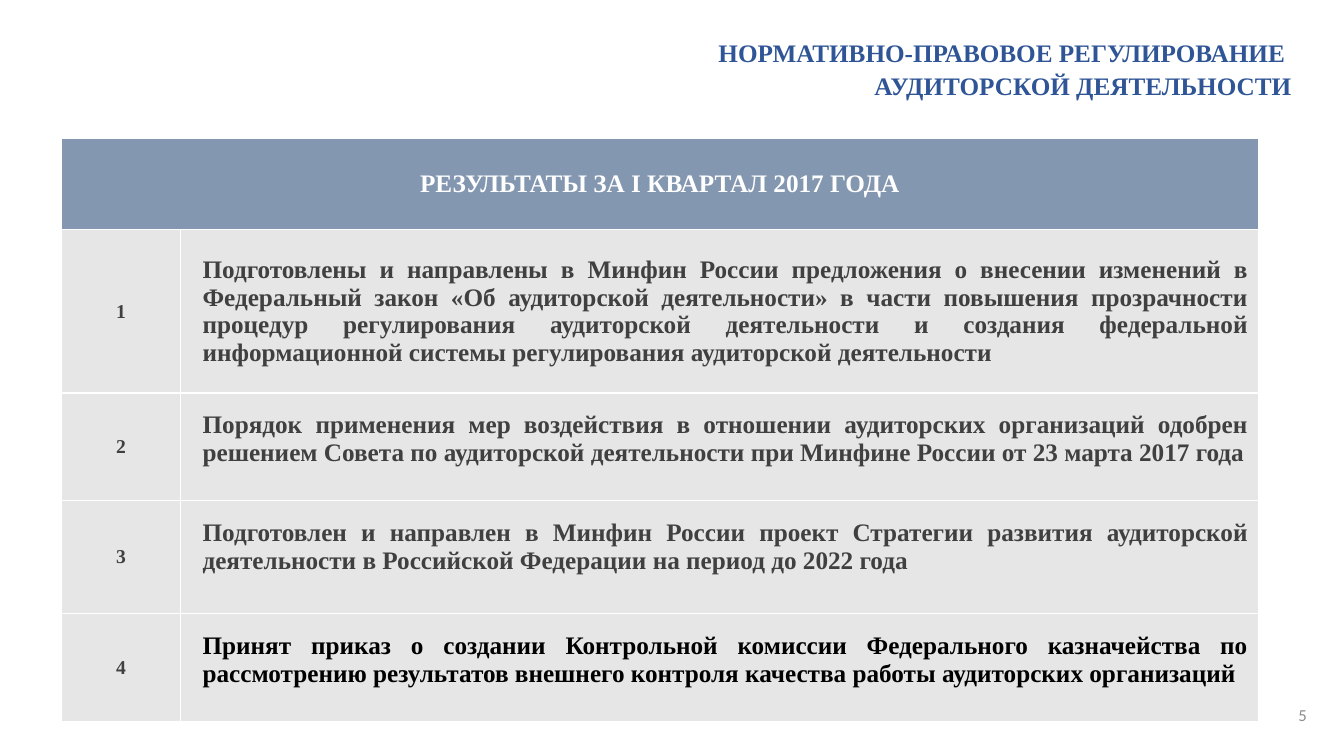
from pptx import Presentation
from pptx.dml.color import RGBColor
from pptx.enum.text import MSO_ANCHOR as Anchor, MSO_AUTO_SIZE as Fit, PP_ALIGN as Align
from pptx.util import Inches, Pt

BLUE = RGBColor(0x2F, 0x55, 0x97)
STEEL = RGBColor(0x84, 0x97, 0xB0)
PALE = RGBColor(0xE6, 0xE6, 0xE6)
DARK = RGBColor(0x40, 0x40, 0x40)
GRAY = RGBColor(0x8C, 0x8C, 0x8C)
BLACK = RGBColor(0, 0, 0)
WHITE = RGBColor(0xFF, 0xFF, 0xFF)
SERIF = "Times New Roman"

TITLE = ["НОРМАТИВНО-ПРАВОВОЕ РЕГУЛИРОВАНИЕ ", "АУДИТОРСКОЙ ДЕЯТЕЛЬНОСТИ"]
HEAD = "РЕЗУЛЬТАТЫ ЗА I КВАРТАЛ 2017 ГОДА"
# text, row height, anchor, top margin, colour
ITEMS = [
    ("Подготовлены и направлены в Минфин России предложения о внесении изменений "
     "в Федеральный закон «Об аудиторской деятельности» в части повышения "
     "прозрачности процедур регулирования аудиторской деятельности и создания "
     "федеральной информационной системы регулирования аудиторской деятельности",
     1.62, Anchor.MIDDLE, 0.05, DARK),
    ("Порядок применения мер воздействия в отношении аудиторских организаций "
     "одобрен решением Совета по аудиторской деятельности при Минфине России "
     "от 23 марта 2017 года", 1.07, Anchor.TOP, 0.18, DARK),
    ("Подготовлен и направлен в Минфин России проект Стратегии развития "
     "аудиторской деятельности в Российской Федерации на период до 2022 года",
     1.12, Anchor.TOP, 0.18, DARK),
    ("Принят приказ о создании Контрольной комиссии Федерального казначейства "
     "по рассмотрению результатов внешнего контроля качества работы аудиторских "
     "организаций", 1.07, Anchor.TOP, 0.18, BLACK),
]


def style(para, align, size, color, name=SERIF, bold=True):
    para.alignment = align
    look = {"name": name, "size": Pt(size), "bold": bold}
    for key, value in look.items():
        setattr(para.font, key, value)
    para.font.color.rgb = color


def place(shape, left, top, width, height):
    box = {"left": left, "top": top, "width": width, "height": height}
    for key, value in box.items():
        setattr(shape, key, Inches(value))


def add_title(slide):
    title = slide.shapes.title
    place(title, 3.42, 0.29, 9.49, 0.85)
    frame = title.text_frame
    frame.text = "\n".join(TITLE)
    frame.auto_size = Fit.NONE
    frame.vertical_anchor = Anchor.TOP
    for para in frame.paragraphs:
        style(para, Align.RIGHT, 18, BLUE)
        para.line_spacing = 1.1


def fill_cell(cell, text, fill, align, size, color, anchor=Anchor.MIDDLE, top=0.05):
    cell.text = text
    cell.fill.solid()
    cell.fill.fore_color.rgb = fill
    cell.vertical_anchor = anchor
    cell.margin_top = Inches(top)
    style(cell.text_frame.paragraphs[0], align, size, color)


def add_results(slide):
    frame = slide.shapes.add_table(len(ITEMS) + 1, 2, Inches(0.61), Inches(1.37),
                                   Inches(11.87), Inches(5.79))
    table = frame.table
    table.horz_banding = False
    for col, width in zip(table.columns, (1.18, 10.69)):
        col.width = Inches(width)
    table.rows[0].height = Inches(0.91)
    table.cell(0, 0).merge(table.cell(0, 1))
    fill_cell(table.cell(0, 0), HEAD, STEEL, Align.CENTER, 18, WHITE)
    for num, (text, height, anchor, top, color) in enumerate(ITEMS, 1):
        table.rows[num].height = Inches(height)
        fill_cell(table.cell(num, 0), str(num), PALE, Align.CENTER, 14, DARK)
        cell = table.cell(num, 1)
        fill_cell(cell, text, PALE, Align.JUSTIFY, 18, color, anchor, top)
        cell.margin_left = Inches(0.22)


def add_number(slide, text):
    box = slide.shapes.add_textbox(Inches(12.74), Inches(6.89), Inches(0.32), Inches(0.4))
    frame = box.text_frame
    frame.text = text
    frame.word_wrap = True
    frame.vertical_anchor = Anchor.MIDDLE
    style(frame.paragraphs[0], Align.RIGHT, 12, GRAY, "Calibri", False)


def main():
    deck = Presentation()
    deck.slide_width, deck.slide_height = Inches(13.33), Inches(7.5)
    slide = deck.slides.add_slide(deck.slide_layouts[5])
    add_title(slide)
    add_results(slide)
    add_number(slide, "5")
    deck.save("out.pptx")


if __name__ == "__main__":
    main()
